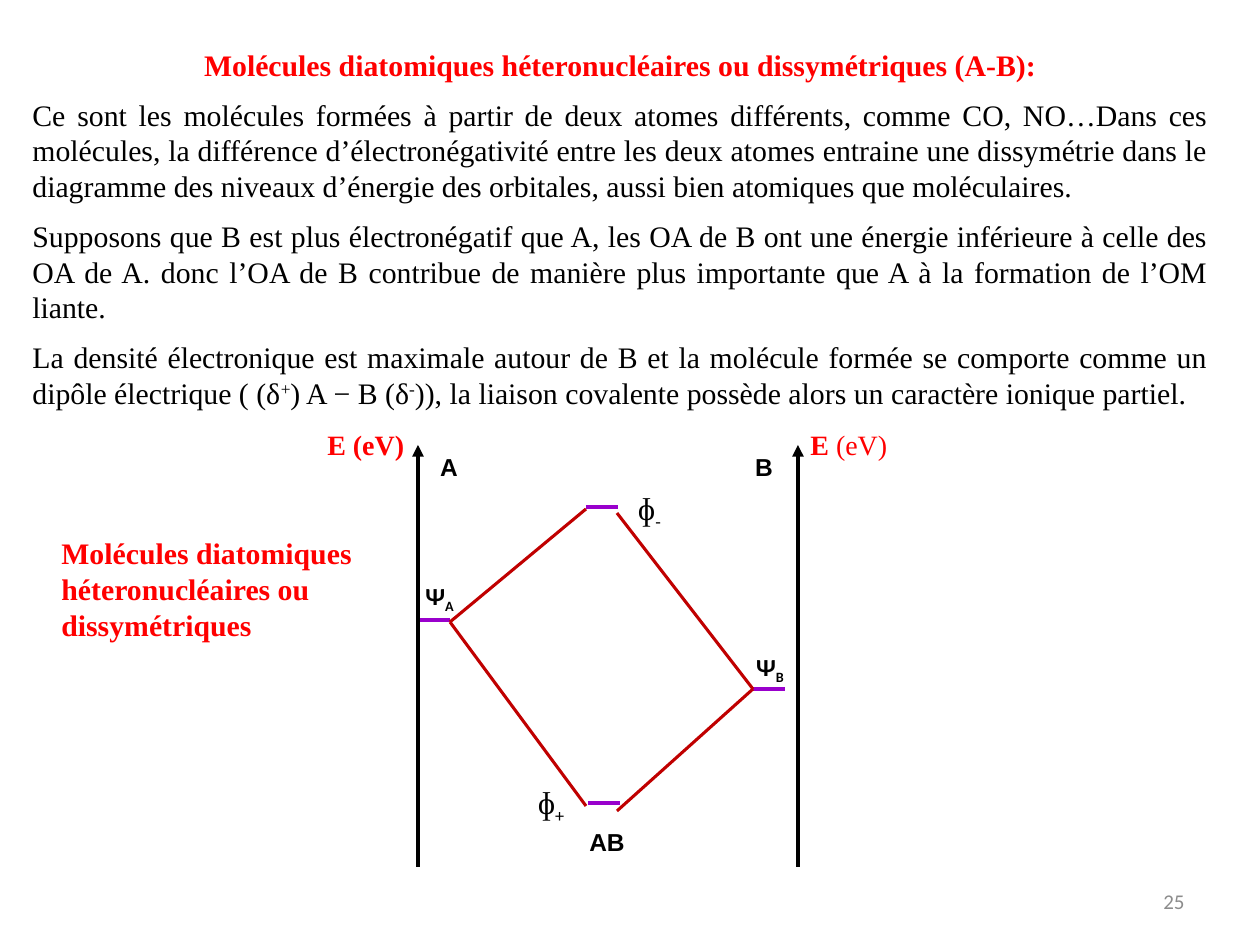
from dataclasses import dataclass
from typing import Optional

from lxml.etree import SubElement
from pptx import Presentation
from pptx.dml.color import RGBColor
from pptx.enum.shapes import MSO_CONNECTOR as Connector
from pptx.enum.text import MSO_ANCHOR as Anchor, MSO_AUTO_SIZE as AutoSize, PP_ALIGN as Align
from pptx.oxml.ns import qn
from pptx.util import Emu, Pt

EMU_PER_PX = 914400 / 126
COLORS = {"text": "000000", "accent": "FF0000", "level": "9900CC", "link": "C00000", "number": "8C8C8C"}
SERIF, SANS, ARIAL = "Times New Roman", "Calibri", "Arial"


def px(value: int) -> Emu:
    return Emu(round(value * EMU_PER_PX))


@dataclass(frozen=True)
class Run:
    text: str
    size: int
    font: str = SERIF
    color: str = "text"
    bold: bool = False
    baseline: int = 0


@dataclass(frozen=True)
class Label:
    box: tuple[int, int, int, int]
    paragraphs: tuple[tuple[Run, ...], ...]
    align: Align = Align.CENTER
    inset: Optional[int] = None
    wrap: bool = True
    anchor: Anchor = Anchor.TOP
    spacing: int = 0
    first_align: Optional[Align] = None


@dataclass(frozen=True)
class Line:
    start: tuple[int, int]
    end: tuple[int, int]
    color: str
    width: float
    arrow: bool = False


def draw_label(slide, label: Label) -> None:
    shape = slide.shapes.add_textbox(*map(px, label.box))
    frame = shape.text_frame
    frame_format = {"word_wrap": label.wrap, "auto_size": AutoSize.NONE, "vertical_anchor": label.anchor}
    if label.inset is not None:
        for side in ("left", "top", "right", "bottom"):
            frame_format[f"margin_{side}"] = px(label.inset)
    for name, value in frame_format.items():
        setattr(frame, name, value)
    for index, runs in enumerate(label.paragraphs):
        paragraph = frame.add_paragraph() if index else frame.paragraphs[0]
        align = label.first_align if index == 0 and label.first_align else label.align
        paragraph_format = {
            "alignment": align,
            "space_before": Pt(label.spacing),
            "space_after": Pt(label.spacing),
        }
        for name, value in paragraph_format.items():
            setattr(paragraph, name, value)
        for item in runs:
            draw_run(paragraph, item)


def draw_run(paragraph, item: Run) -> None:
    run = paragraph.add_run()
    run.text = item.text
    for name, value in {"size": Pt(item.size), "name": item.font, "bold": item.bold}.items():
        setattr(run.font, name, value)
    run.font.color.rgb = RGBColor.from_string(COLORS[item.color])
    if item.baseline:
        run._r.get_or_add_rPr().set("baseline", str(item.baseline * 1000))


def draw_line(slide, line: Line) -> None:
    connector = slide.shapes.add_connector(Connector.STRAIGHT, *map(px, line.start + line.end))
    connector.line.color.rgb = RGBColor.from_string(COLORS[line.color])
    connector.line.width = Pt(line.width)
    if line.arrow:
        SubElement(connector.line._get_or_add_ln(), qn("a:tailEnd"), type="triangle")
    SubElement(connector._element.spPr, qn("a:effectLst"))


def level(left: int, top: int) -> Line:
    return Line((left, top), (left + 32, top), "level", 2.25)


def link(start: tuple[int, int], end: tuple[int, int]) -> Line:
    return Line(start, end, "link", 1.75)


def axis(left: int) -> Line:
    return Line((left, 867), (left, 445), "text", 2.25, arrow=True)


def atom(text: str, left: int, top: int) -> Label:
    return Label((left, top, 42, 30), ((Run(text, 14, ARIAL, bold=True),),), inset=0)


def psi(name: str) -> tuple[tuple[Run, ...], ...]:
    return ((Run("Ψ", 14, SANS, bold=True), Run(name, 14, SANS, bold=True, baseline=-25)),)


def phi(sign: str, left: int, top: int, width: int) -> Label:
    runs = (Run("ɸ", 18), Run(sign, 18, SANS, baseline=-25))
    return Label((left, top, width, 50), (runs,), wrap=False)


def heading(text: str, size: int = 17, bold: bool = True) -> Run:
    return Run(text, size, color="accent", bold=bold)


def body(text: str, baseline: int = 0) -> Run:
    return Run(text, 17, baseline=baseline)


PSI_A, PSI_B = (450, 622), (753, 689)
LINES = (
    level(753, 689), level(418, 620), level(586, 507), level(588, 803),
    link(PSI_A, (586, 806)), link(PSI_B, (617, 811)),
    link(PSI_A, (586, 509)), link(PSI_B, (617, 513)),
    axis(418), axis(798),
)

EXPLANATION = (
    (heading("Molécules diatomiques héteronucléaires ou dissymétriques (A-B):"),),
    (body("Ce sont les molécules formées à partir de deux atomes différents, comme CO, NO…Dans ces "
          "molécules, la différence d’électronégativité entre les deux atomes entraine une dissymétrie "
          "dans le diagramme des niveaux d’énergie des orbitales, aussi bien atomiques que moléculaires."),),
    (body("Supposons que B est plus électronégatif que A, les OA de B ont une énergie inférieure à celle "
          "des OA de A. donc l’OA de B contribue de manière plus importante que A à la formation de l’OM "
          "liante."),),
    (body("La densité électronique est maximale autour de B et la molécule formée se comporte comme un "
          "dipôle électrique ( (δ"), body("+", 30), body(") A − B (δ"), body("-", 30),
     body(")), la liaison covalente possède alors un caractère ionique partiel.")),
)
CAPTION = ("Molécules diatomiques ", "héteronucléaires ou ", "dissymétriques")

LABELS = (
    Label((903, 876, 294, 50), ((Run("25", 12, SANS, "number"),),), Align.RIGHT, anchor=Anchor.MIDDLE),
    Label((20, 33, 1201, 391), EXPLANATION, Align.JUSTIFY, anchor=Anchor.MIDDLE, spacing=4,
          first_align=Align.CENTER),
    Label((410, 581, 59, 30), psi("A"), inset=0),
    Label((743, 646, 54, 43), psi("B"), wrap=False),
    atom("ΑΒ", 586, 827), atom("Α", 428, 452), atom("Β", 743, 452),
    phi("-", 625, 483, 49), phi("+", 524, 777, 54),
    Label((315, 421, 118, 47), ((heading("E (eV)", 16),),), Align.LEFT),
    Label((798, 421, 108, 47), ((heading("E", 16), heading(" (eV)", 16, False)),), Align.LEFT),
    Label((49, 529, 354, 121), tuple((heading(text),) for text in CAPTION), Align.JUSTIFY),
)


def main() -> None:
    presentation = Presentation()
    presentation.slide_width, presentation.slide_height = px(1260), px(945)
    slide = presentation.slides.add_slide(presentation.slide_layouts[6])
    for line in LINES:
        draw_line(slide, line)
    for label in LABELS:
        draw_label(slide, label)
    presentation.save("out.pptx")


if __name__ == "__main__":
    main()
